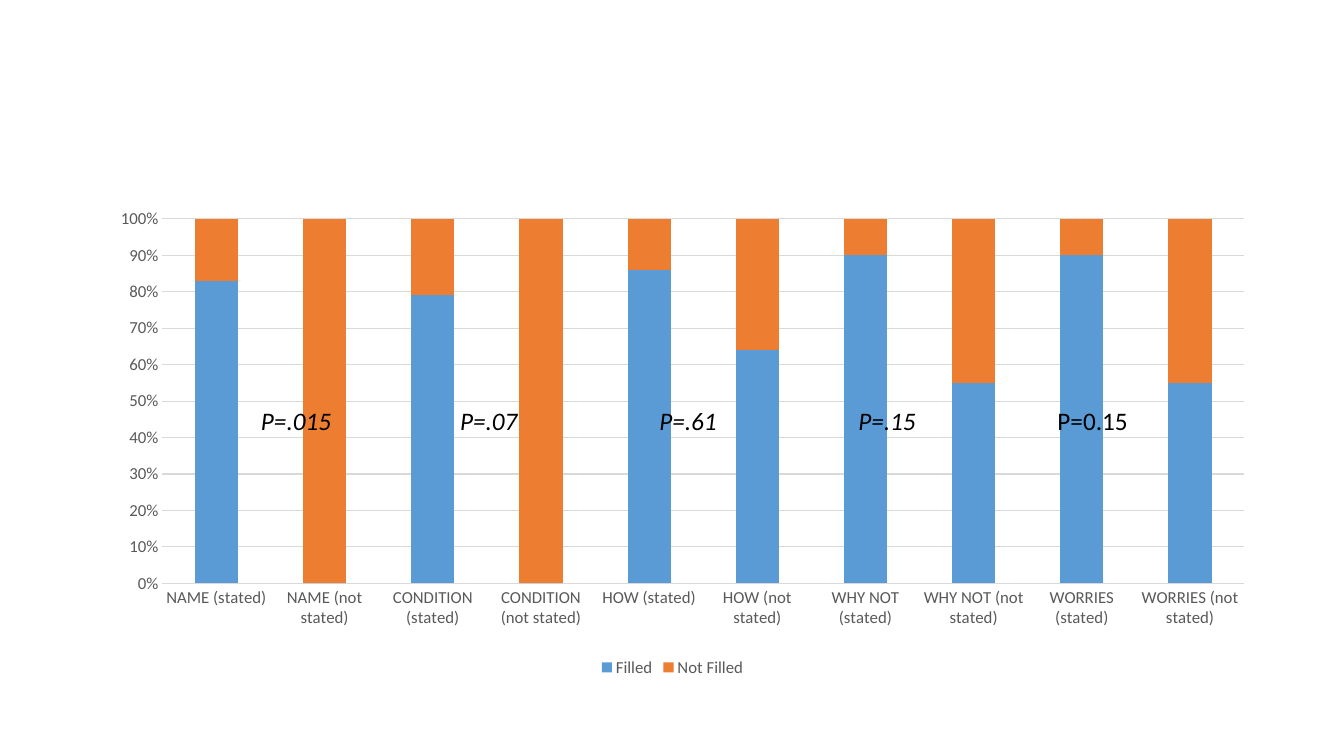
"""Build a slide with a 100% stacked chart and a row of P values."""
from lxml import etree
from pptx import Presentation
from pptx.chart.data import CategoryChartData
from pptx.dml.color import RGBColor
from pptx.enum.chart import XL_CHART_TYPE, XL_LEGEND_POSITION, XL_TICK_MARK
from pptx.enum.text import MSO_AUTO_SIZE
from pptx.oxml.ns import qn
from pptx.util import Inches, Pt

STACKED_100 = XL_CHART_TYPE.COLUMN_STACKED_100
LEGEND_BOTTOM = XL_LEGEND_POSITION.BOTTOM
NO_TICK = XL_TICK_MARK.NONE
FIT_SHAPE = MSO_AUTO_SIZE.SHAPE_TO_FIT_TEXT

BLACK = RGBColor(0x00, 0x00, 0x00)
GREY = RGBColor(0x59, 0x59, 0x59)
GRID_GREY = RGBColor(0xD9, 0xD9, 0xD9)
BLUE = RGBColor(0x5B, 0x9B, 0xD5)
ORANGE = RGBColor(0xED, 0x7D, 0x31)
FONT = "Calibri"

QUESTIONS = ["NAME", "CONDITION", "HOW", "WHY NOT", "WORRIES"]
ANSWERS = ["stated", "not stated"]
FILLED_PERCENT = [83, 0, 79, 0, 86, 64, 90, 55, 90, 55]
CHART_BOX = (0.92, 2, 11.5, 4.76)
PLOT_SHARES = {"x": 0.06, "y": 0.036, "w": 0.933, "h": 0.76}
P_VALUES = [("P=.015", 1.16, True), ("P=.07", 0.93, True), ("P=.61", 1.29, True),
            ("P=.15", 1.16, True), ("P=0.15", 1.16, False)]
P_LEFT, P_TOP, P_STEP, P_HEIGHT = 2.49, 3.97, 1.975, 0.4


def style_font(font, size, color):
    """Set the typeface, size and colour of a font."""
    font.name = FONT
    font.size = Pt(size)
    font.color.rgb = color


def style_axis(axis):
    """Remove tick marks and the line from an axis and set its labels."""
    axis.major_tick_mark = axis.minor_tick_mark = NO_TICK
    axis.format.line.fill.background()
    style_font(axis.tick_labels.font, 12, GREY)


def place_plot(chart):
    """Fix the inner plot area at its shares of the chart."""
    plot_area = chart.element.find(qn("c:chart")).find(qn("c:plotArea"))
    for layout in plot_area.findall(qn("c:layout")):
        plot_area.remove(layout)
    layout = etree.Element(qn("c:layout"))
    plot_area.insert(0, layout)
    manual = etree.SubElement(layout, qn("c:manualLayout"))
    settings = {"layoutTarget": "inner", "xMode": "edge", "yMode": "edge", **PLOT_SHARES}
    for name, value in settings.items():
        etree.SubElement(manual, qn(f"c:{name}")).set("val", str(value))


def add_response_chart(slide):
    """Add the chart of filled and not filled answers."""
    data = CategoryChartData()
    data.categories = [f"{question} ({answer})" for question in QUESTIONS for answer in ANSWERS]
    data.add_series("Filled", FILLED_PERCENT)
    data.add_series("Not Filled", [100 - percent for percent in FILLED_PERCENT])
    box = [Inches(length) for length in CHART_BOX]
    chart = slide.shapes.add_chart(STACKED_100, *box, data).chart
    chart.has_title = False
    style_font(chart.font, 10, BLACK)
    style_axis(chart.category_axis)
    value_axis = chart.value_axis
    style_axis(value_axis)
    value_axis.major_unit = 0.1
    value_axis.tick_labels.number_format = "0%"
    value_axis.tick_labels.number_format_is_linked = False
    grid_line = value_axis.major_gridlines.format.line
    grid_line.color.rgb = GRID_GREY
    grid_line.width = Pt(0.75)
    plot = chart.plots[0]
    plot.vary_by_categories = False
    plot.gap_width = 150
    plot.overlap = 100
    for series, color in zip(plot.series, (BLUE, ORANGE)):
        series.format.fill.solid()
        series.format.fill.fore_color.rgb = color
    chart.has_legend = True
    chart.legend.position = LEGEND_BOTTOM
    chart.legend.include_in_layout = False
    style_font(chart.legend.font, 12, GREY)
    place_plot(chart)


def add_p_value(slide, column, text, width, italic):
    """Add the P value of one question in its column."""
    left = P_LEFT + column * P_STEP
    shape = slide.shapes.add_textbox(Inches(left), Inches(P_TOP), Inches(width), Inches(P_HEIGHT))
    shape.text_frame.word_wrap = True
    shape.text_frame.auto_size = FIT_SHAPE
    run = shape.text_frame.paragraphs[0].add_run()
    run.text = text
    style_font(run.font, 18, BLACK)
    run.font.italic = italic


def main():
    """Build and save the presentation."""
    presentation = Presentation()
    presentation.slide_width = Inches(13.33)
    presentation.slide_height = Inches(7.5)
    slide = presentation.slides.add_slide(presentation.slide_layouts[6])
    add_response_chart(slide)
    for column, (text, width, italic) in enumerate(P_VALUES):
        add_p_value(slide, column, text, width, italic)
    presentation.save("out.pptx")


if __name__ == "__main__":
    main()
